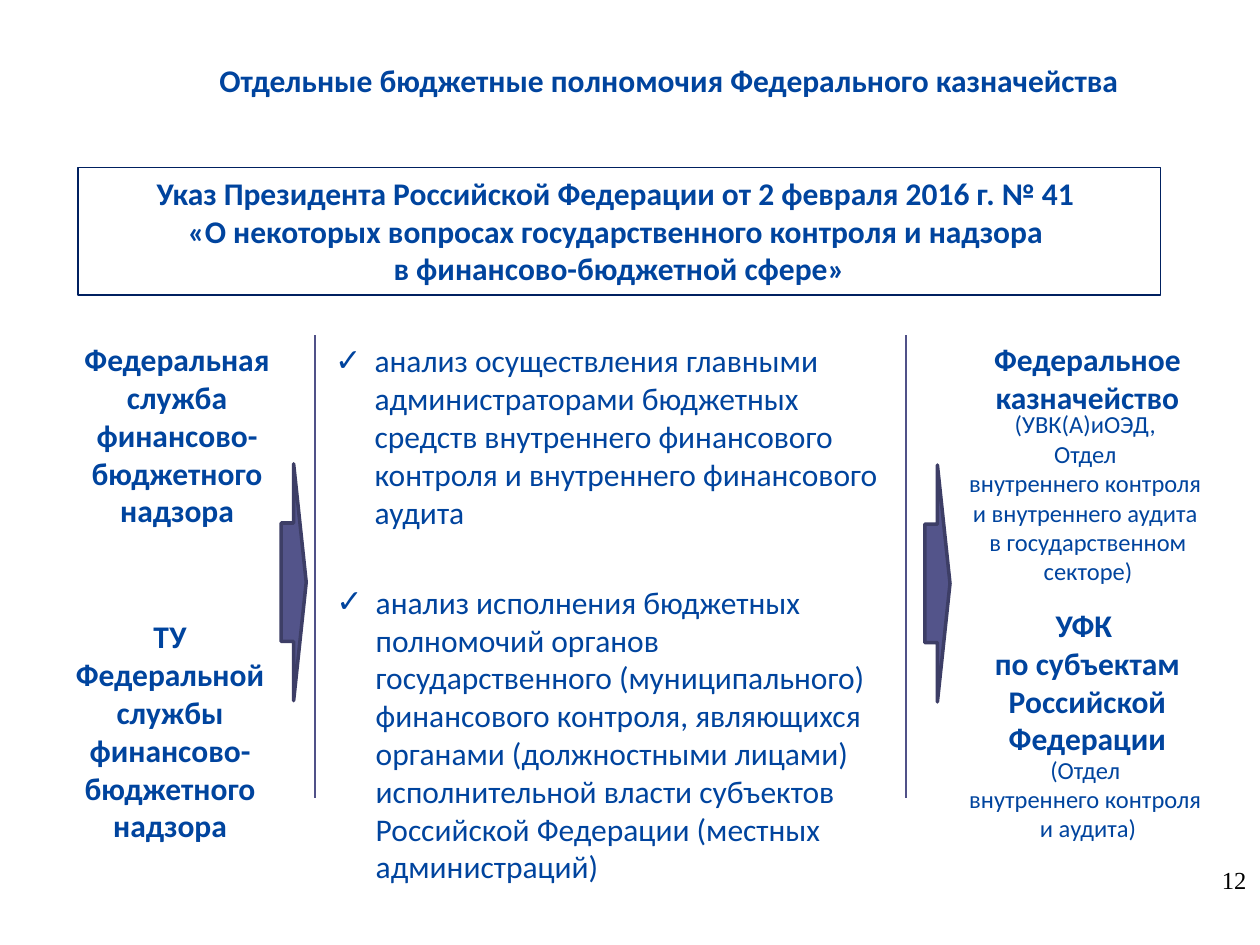
from lxml.etree import SubElement
from pptx import Presentation
from pptx.dml.color import RGBColor
from pptx.enum.shapes import MSO_CONNECTOR, MSO_SHAPE
from pptx.enum.text import MSO_ANCHOR, MSO_AUTO_SIZE, PP_ALIGN
from pptx.oxml.ns import qn
from pptx.util import Pt

BLUE, NAVY, VIOLET, DARK_VIOLET, RULE = "00449E", "002060", "53548A", "3D3E66", "505188"
HEADING = "Отдельные бюджетные полномочия Федерального казначейства"
HEADING_BOX = (115.9, 31, 532.8, 28.8)
DECREE = [
    "Указ Президента Российской Федерации от 2 февраля 2016 г. № 41 \n"
    "«О некоторых вопросах государственного контроля и надзора \n"
    "в финансово-бюджетной сфере»"
]
DECREE_BOX = (44.6, 95.8, 618.5, 72.7)
POWERS = [
    ((184.3, 191.5, 332.6, 116.6), MSO_ANCHOR.TOP,
     "анализ осуществления главными администраторами бюджетных средств "
     "внутреннего финансового контроля и внутреннего финансового аудита"),
    ((185, 337.7, 326.2, 163.4), MSO_ANCHOR.MIDDLE,
     "анализ исполнения бюджетных полномочий органов государственного "
     "(муниципального) финансового контроля, являющихся органами "
     "(должностными лицами) исполнительной власти субъектов Российской "
     "Федерации (местных администраций)"),
]
AUTHORITIES = [
    ((28.1, 190.8, 146.2, 116.6), ["Федеральная служба финансово-бюджетного надзора"]),
    ((32.4, 349.2, 129.6, 138.2), ["ТУ Федеральной службы финансово-бюджетного надзора"]),
    ((556.6, 190.8, 129.6, 51.1), ["Федеральное казначейство"]),
    ((556.6, 342.7, 129.6, 94.3), ["УФК ", "по субъектам Российской Федерации"]),
]
DEPARTMENTS = [
    ((542.9, 230.4, 157.7, 108.7),
     ["(УВК(А)иОЭД, \nОтдел ",
      "внутреннего контроля \nи внутреннего аудита \nв государственном секторе)"]),
    ((542.9, 427.7, 157.7, 58.3), ["(Отдел ", "внутреннего контроля \nи аудита)"]),
]
RULES_X, RULE_TOP, RULE_BOTTOM = (180, 517.7), 191.5, 455.8
ARROWS = [(160.6, 265), (528.5, 265.7)]
ARROW_SIZE = (14.4, 135.4)
NUMBER_BOX = (685.4, 491, 33.9, 37.4)


def color(value):
    return RGBColor.from_string(value)


def place(shape, box):
    shape.left, shape.top, shape.width, shape.height = map(Pt, box)


def write(shape, lines, size=18, bold=False, align=PP_ALIGN.CENTER,
          anchor=MSO_ANCHOR.TOP, font="Calibri", ink=BLUE):
    frame = shape.text_frame
    frame.word_wrap = True
    frame.auto_size = MSO_AUTO_SIZE.NONE
    frame.vertical_anchor = anchor
    for index, line in enumerate(lines):
        paragraph = frame.add_paragraph() if index else frame.paragraphs[0]
        paragraph.alignment = align
        paragraph.space_before = Pt(0)
        for part_index, part in enumerate(line.split("\n")):
            if part_index:
                paragraph.add_line_break()
            run = paragraph.add_run()
            run.text = part
            run.font.name = font
            run.font.size = Pt(size)
            run.font.bold = bold
            run.font.color.rgb = color(ink)


def add_text(slide, box, lines, **style):
    write(slide.shapes.add_textbox(*map(Pt, box)), lines, **style)


def add_check_mark(paragraph):
    properties = paragraph._p.get_or_add_pPr()
    properties.set("marL", str(Pt(22.5)))
    properties.set("indent", str(Pt(-22.5)))
    SubElement(properties, qn("a:buChar")).set("char", "✓")


def add_outlined(slide, kind, box, line, width):
    shape = slide.shapes.add_shape(kind, *map(Pt, box))
    shape.shadow.inherit = False
    shape.line.color.rgb = color(line)
    shape.line.width = Pt(width)
    return shape


def main():
    presentation = Presentation()
    presentation.slide_width, presentation.slide_height = Pt(720), Pt(540)
    slide = presentation.slides.add_slide(presentation.slide_layouts[3])
    title, *bodies = list(slide.placeholders)[:3]

    place(title, HEADING_BOX)
    write(title, [HEADING], bold=True)

    decree = add_outlined(slide, MSO_SHAPE.RECTANGLE, DECREE_BOX, NAVY, 0.75)
    decree.fill.background()
    write(decree, DECREE, bold=True)

    for body, (box, anchor, power) in zip(bodies, POWERS):
        place(body, box)
        write(body, [power], align=PP_ALIGN.LEFT, anchor=anchor)
        add_check_mark(body.text_frame.paragraphs[0])

    for x in RULES_X:
        rule = slide.shapes.add_connector(
            MSO_CONNECTOR.STRAIGHT, Pt(x), Pt(RULE_TOP), Pt(x), Pt(RULE_BOTTOM))
        rule.line.color.rgb = color(RULE)
        rule.line.width = Pt(0.75)
        SubElement(rule._element.spPr, qn("a:effectLst"))

    for corner in ARROWS:
        arrow = add_outlined(slide, MSO_SHAPE.RIGHT_ARROW, corner + ARROW_SIZE, DARK_VIOLET, 2)
        arrow.fill.solid()
        arrow.fill.fore_color.rgb = color(VIOLET)

    for box, lines in AUTHORITIES:
        add_text(slide, box, lines, bold=True)
    for box, lines in DEPARTMENTS:
        add_text(slide, box, lines, size=14)
    add_text(slide, NUMBER_BOX, ["12"], size=14, align=PP_ALIGN.RIGHT,
             font="Times New Roman", ink="000000")

    presentation.save("out.pptx")


if __name__ == "__main__":
    main()
